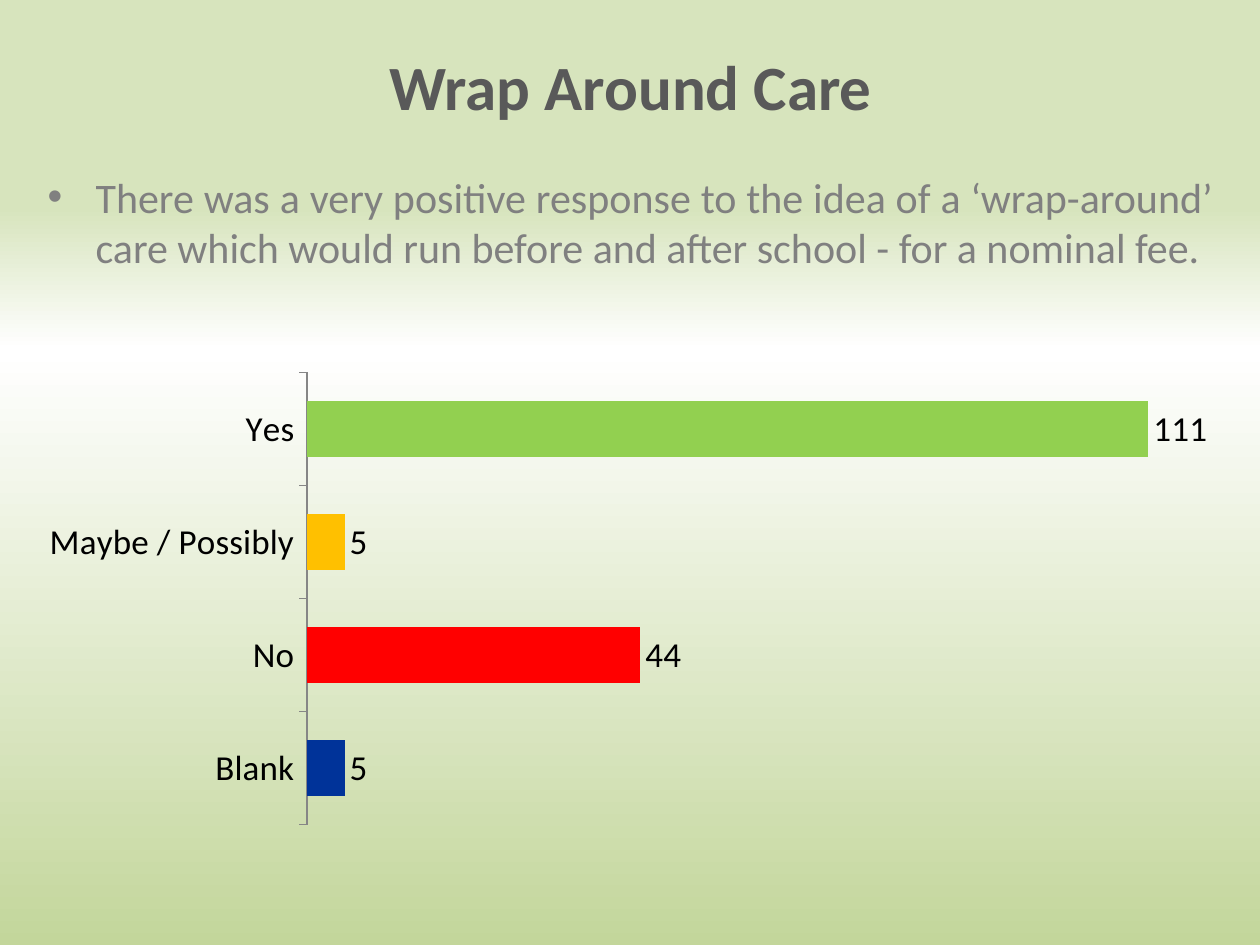
from lxml import etree
from pptx import Presentation, util as u
from pptx.chart.data import CategoryChartData
from pptx.dml.color import RGBColor
from pptx.enum import chart as ch, text
from pptx.oxml.ns import qn

PALE_GREEN = RGBColor(0xD7, 0xE4, 0xBD)
WHITE = RGBColor(0xFF, 0xFF, 0xFF)
DEEP_GREEN = RGBColor(0xC3, 0xD6, 0x9B)
DARK_GREY = RGBColor(0x59, 0x59, 0x59)
MID_GREY = RGBColor(0x80, 0x80, 0x80)
AXIS_GREY = RGBColor(0x86, 0x86, 0x86)
BLACK = RGBColor(0, 0, 0)
BLUE = RGBColor(0x00, 0x33, 0x99)
RED = RGBColor(0xFF, 0, 0)
AMBER = RGBColor(0xFF, 0xC0, 0)
GREEN = RGBColor(0x92, 0xD0, 0x50)


class SurveySlide:
    """Holds the style and the slide; boxes are in percent of the slide."""

    FONT = "Calibri"

    def __init__(self, deck):
        self.deck = deck
        self.slide = deck.slides.add_slide(deck.slide_layouts[5])

    def box(self, left, top, width, height):
        across, down = self.deck.slide_width, self.deck.slide_height
        return [int(share * side / 100) for share, side in
                zip((left, top, width, height), (across, down) * 2)]

    def style(self, font, size, color, bold=False):
        font.name, font.size, font.bold = self.FONT, u.Pt(size), bold
        font.color.rgb = color

    def background(self, stops):
        fill = self.slide.background.fill
        fill.gradient()
        fill.gradient_angle = 270
        stop_list = self.slide.background._cSld.find(".//" + qn("a:gsLst"))
        for old in list(stop_list):
            stop_list.remove(old)
        for percent, color in stops:
            stop = etree.SubElement(stop_list, qn("a:gs"), pos=str(percent * 1000))
            etree.SubElement(stop, qn("a:srgbClr"), val=str(color))

    def title(self, wording, area):
        heading = self.slide.shapes.title
        heading.left, heading.top, heading.width, heading.height = self.box(*area)
        frame = heading.text_frame
        frame.text = wording
        frame.vertical_anchor = text.MSO_ANCHOR.MIDDLE
        frame.paragraphs[0].alignment = text.PP_ALIGN.CENTER
        self.style(frame.paragraphs[0].runs[0].font, 36, DARK_GREY, bold=True)

    def bullet(self, wording, area):
        frame = self.slide.shapes.add_textbox(*self.box(*area)).text_frame
        frame.word_wrap = True
        frame.text = wording
        finding = frame.paragraphs[0]
        finding.alignment = text.PP_ALIGN.JUSTIFY
        props = finding._p.get_or_add_pPr()
        indent = u.Inches(0.38)
        props.set("marL", str(indent))
        props.set("indent", str(-indent))
        etree.SubElement(props, qn("a:buFont"), typeface="Arial")
        etree.SubElement(props, qn("a:buChar"), char="•")
        self.style(finding.runs[0].font, 24, MID_GREY)

    def bar_chart(self, answers, area):
        data = CategoryChartData()
        data.categories = [answer for answer, _, _ in answers]
        data.add_series("Series 1", [votes for _, votes, _ in answers])
        chart = self.slide.shapes.add_chart(
            ch.XL_CHART_TYPE.BAR_CLUSTERED, *self.box(*area), data).chart
        chart.has_legend = chart.has_title = False
        self.style(chart.font, 10, BLACK)

        # Axes
        answer_axis, vote_axis = chart.category_axis, chart.value_axis
        answer_axis.major_tick_mark = ch.XL_TICK_MARK.OUTSIDE
        answer_axis.format.line.color.rgb = AXIS_GREY
        self.style(answer_axis.tick_labels.font, 20, BLACK)
        vote_axis.has_major_gridlines = False
        vote_axis.minimum_scale, vote_axis.maximum_scale = 0, 120
        vote_axis.visible = False

        # Bars and their values
        plot = chart.plots[0]
        plot.gap_width = 100
        plot.vary_by_categories = False
        for index, (_, _, color) in enumerate(answers):
            fill = plot.series[0].points[index].format.fill
            fill.solid()
            fill.fore_color.rgb = color
        labels = plot.series[0].data_labels
        labels.show_value = True
        labels.position = ch.XL_LABEL_POSITION.OUTSIDE_END
        self.style(labels.font, 20, BLACK)


def main():
    deck = Presentation()
    deck.slide_width, deck.slide_height = u.Inches(10), u.Inches(7.5)
    care = SurveySlide(deck)
    care.background([(22, PALE_GREEN), (37, WHITE), (100, DEEP_GREEN)])

    # Heading and finding
    care.title("Wrap Around Care", (2.8, 1.73, 94.5, 14.67))
    care.bullet("There was a very positive response to the idea of a "
                "‘wrap-around’ care which would run before and after school "
                "- for a nominal fee.", (2.8, 17.47, 94.5, 75.6))

    # Answers, from the bottom bar up
    care.bar_chart([("Blank", 5, BLUE), ("No", 44, RED),
                    ("Maybe / Possibly", 5, AMBER), ("Yes", 111, GREEN)],
                   (2, 38.4, 96.5, 49.87))
    deck.save("out.pptx")


if __name__ == "__main__":
    main()
